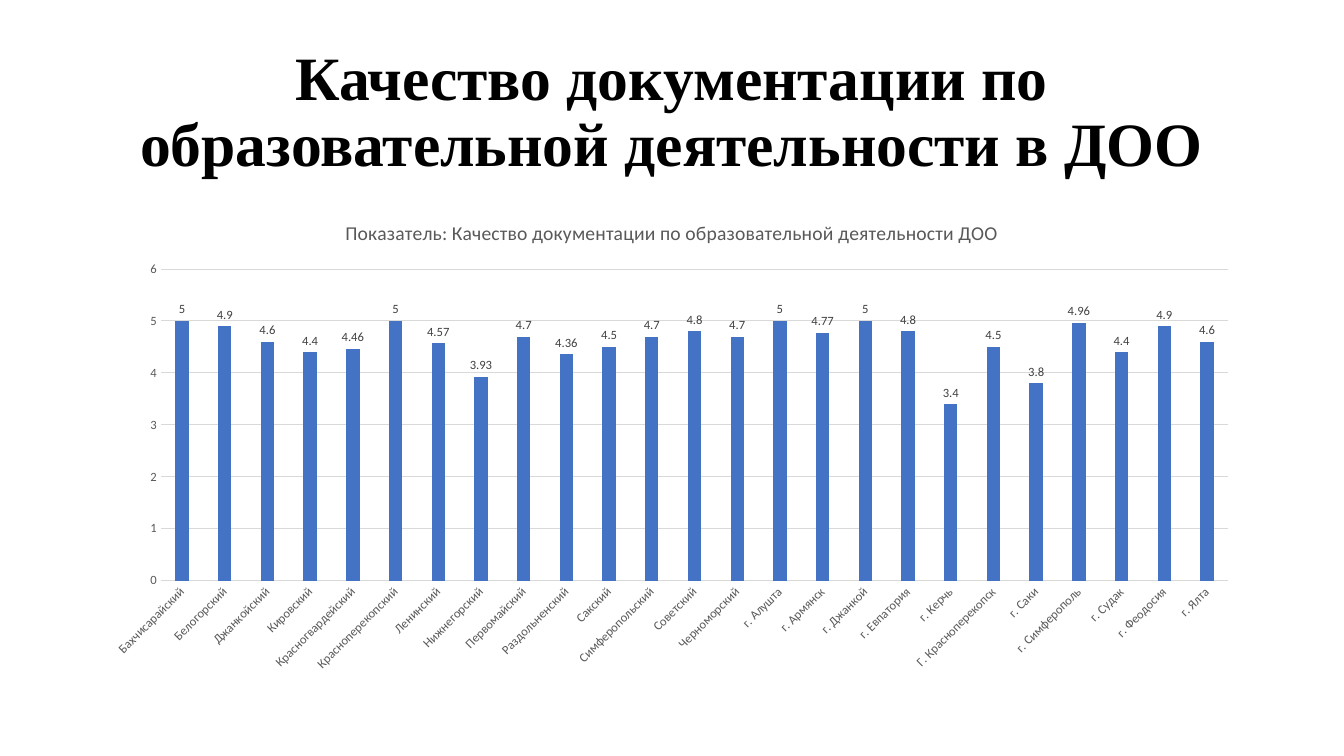
import pptx
import pptx.chart.data
import pptx.dml.color
import pptx.enum.chart
import pptx.enum.text
import pptx.util

Pt = pptx.util.Pt

COLORS = {
    "title": "000000",
    "bar": "4472C4",
    "grid": "D9D9D9",
    "axis_text": "595959",
    "label": "404040",
}

SCORES = {
    "Бахчисарайский": 5,
    "Белогорский": 4.9,
    "Джанкойский": 4.6,
    "Кировский": 4.4,
    "Красногвардейский": 4.46,
    "Красноперекопский": 5,
    "Ленинский": 4.57,
    "Нижнегорский": 3.93,
    "Первомайский": 4.7,
    "Раздольненский": 4.36,
    "Сакский": 4.5,
    "Симферопольский": 4.7,
    "Советский": 4.8,
    "Черноморский": 4.7,
    "г. Алушта": 5,
    "г. Армянск": 4.77,
    "г. Джанкой": 5,
    "г. Евпатория": 4.8,
    "г. Керчь": 3.4,
    "Г. Красноперекопск": 4.5,
    "г. Саки": 3.8,
    "г. Симферополь": 4.96,
    "г. Судак": 4.4,
    "г. Феодосия": 4.9,
    "г. Ялта": 4.6,
}


class SlideBuilder:
    heading_font = "Times New Roman"
    chart_font = "Calibri"
    left, width = Pt(66), Pt(828)

    def __init__(self, prs):
        self.slide = prs.slides.add_slide(prs.slide_layouts[5])

    def color(self, name):
        return pptx.dml.color.RGBColor.from_string(COLORS[name])

    def style_font(self, font, name, size, color, bold=False):
        font.name = name
        font.size = Pt(size)
        font.bold = bold
        font.color.rgb = self.color(color)

    def style_line(self, line):
        line.color.rgb = self.color("grid")
        line.width = Pt(0.75)

    def title(self, text, top, height):
        sp = self.slide.shapes.title
        sp.left, sp.top, sp.width, sp.height = self.left, Pt(top), self.width, Pt(height)
        tf = sp.text_frame
        tf.text = text
        tf.word_wrap = True
        tf.auto_size = pptx.enum.text.MSO_AUTO_SIZE.NONE
        tf.vertical_anchor = pptx.enum.text.MSO_ANCHOR.MIDDLE
        p = tf.paragraphs[0]
        p.alignment = pptx.enum.text.PP_ALIGN.CENTER
        p.line_spacing = 0.9
        self.style_font(p.runs[0].font, self.heading_font, 44, "title", bold=True)

    def column_chart(self, heading, scores, top, height):
        data = pptx.chart.data.CategoryChartData()
        data.categories = list(scores)
        data.add_series("Series 1", list(scores.values()))
        chart = self.slide.shapes.add_chart(
            pptx.enum.chart.XL_CHART_TYPE.COLUMN_CLUSTERED,
            self.left, Pt(top), self.width, Pt(height), data).chart
        self.style_font(chart.font, self.chart_font, 10, "title")
        chart.has_legend = False
        chart.has_title = True
        tf = chart.chart_title.text_frame
        tf.text = heading
        self.style_font(tf.paragraphs[0].runs[0].font, self.chart_font, 14, "axis_text")
        chart.chart_title.include_in_layout = False
        self.columns(chart.plots[0])
        self.axes(chart)

    def columns(self, plot):
        plot.vary_by_categories = False
        plot.gap_width = 219
        plot.overlap = -27
        fill = plot.series[0].format.fill
        fill.solid()
        fill.fore_color.rgb = self.color("bar")
        plot.has_data_labels = True
        labels = plot.data_labels
        labels.show_value = True
        labels.position = pptx.enum.chart.XL_LABEL_POSITION.OUTSIDE_END
        self.style_font(labels.font, self.chart_font, 9, "label")

    def axes(self, chart):
        for axis in (chart.category_axis, chart.value_axis):
            axis.major_tick_mark = pptx.enum.chart.XL_TICK_MARK.NONE
            axis.minor_tick_mark = pptx.enum.chart.XL_TICK_MARK.NONE
            self.style_font(axis.tick_labels.font, self.chart_font, 9, "axis_text")
        self.style_line(chart.category_axis.format.line)
        scale = chart.value_axis
        scale.minimum_scale, scale.maximum_scale, scale.major_unit = 0, 6, 1
        scale.format.line.fill.background()
        scale.has_major_gridlines = True
        self.style_line(scale.major_gridlines.format.line)
        # Slant the district names by 45 degrees
        body = chart.element.xpath(".//c:catAx/c:txPr/a:bodyPr")[0]
        body.set("rot", "-2700000")
        body.set("vert", "horz")


def main():
    prs = pptx.Presentation()
    prs.slide_width, prs.slide_height = Pt(960), Pt(540)
    s = SlideBuilder(prs)
    s.title("Качество документации по образовательной деятельности в ДОО", 28.75, 104.4)
    s.column_chart("Показатель: Качество документации по образовательной деятельности ДОО",
                   SCORES, 143.75, 342.6)
    prs.save("out.pptx")


if __name__ == "__main__":
    main()
